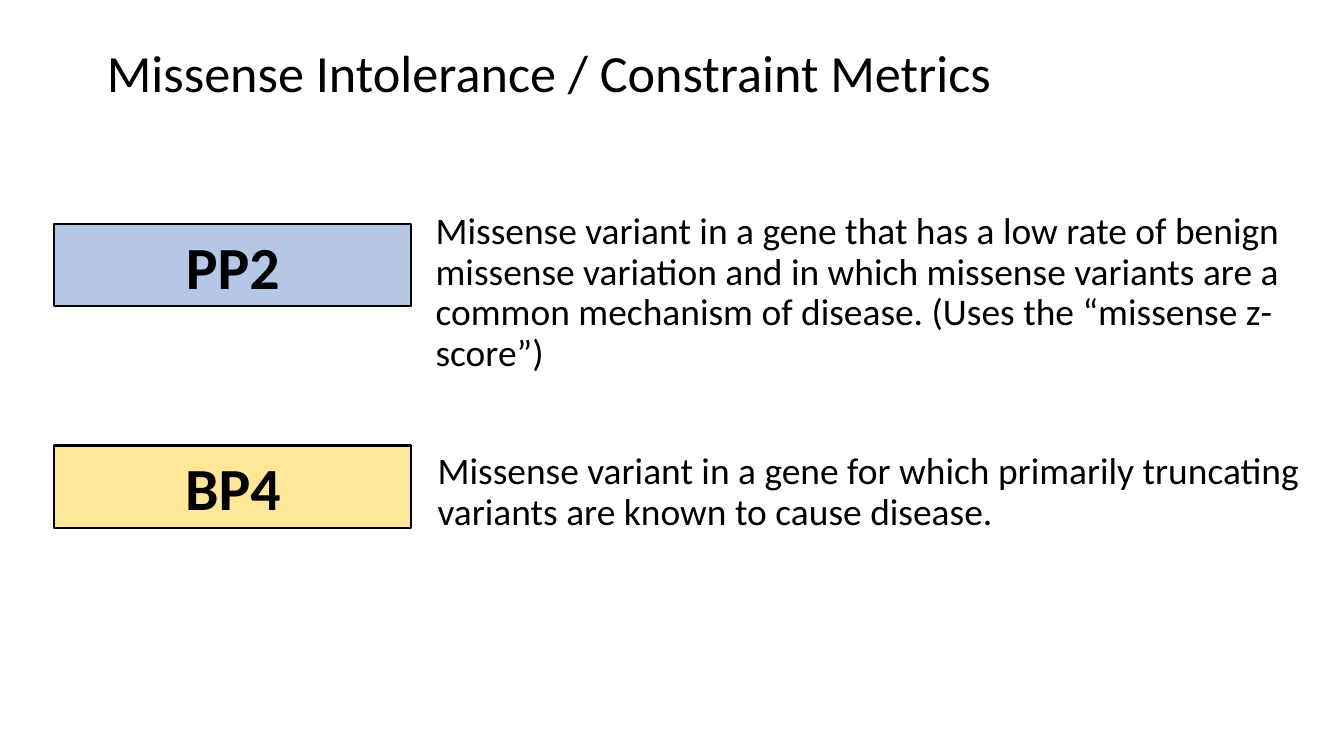
from lxml import etree
from pptx import Presentation
from pptx.dml.color import RGBColor
from pptx.enum.shapes import MSO_SHAPE
from pptx.enum.text import MSO_ANCHOR, MSO_AUTO_SIZE, PP_ALIGN
from pptx.oxml.ns import qn
from pptx.util import Inches, Pt

BLACK = RGBColor(0x00, 0x00, 0x00)
BLUE = RGBColor(0xB4, 0xC7, 0xE7)
YELLOW = RGBColor(0xFF, 0xE6, 0x99)
RECTANGLE = MSO_SHAPE.RECTANGLE
LEFT, CENTER = PP_ALIGN.LEFT, PP_ALIGN.CENTER
TOP, MIDDLE = MSO_ANCHOR.TOP, MSO_ANCHOR.MIDDLE
NO_AUTOFIT = MSO_AUTO_SIZE.NONE


def place(shape, left, top, width, height):
    shape.left, shape.top = Inches(left), Inches(top)
    shape.width, shape.height = Inches(width), Inches(height)


def write(shape, text, size, alignment=LEFT, anchor=TOP, spacing=0.9, bold=False):
    """Fill the shape with one unbulleted paragraph."""
    frame = shape.text_frame
    frame.word_wrap = True
    frame.auto_size = NO_AUTOFIT
    frame.vertical_anchor = anchor
    paragraph = frame.paragraphs[0]
    properties = paragraph._p.get_or_add_pPr()
    properties.set("marL", "0")
    properties.set("indent", "0")
    etree.SubElement(properties, qn("a:buNone"))
    paragraph.alignment = alignment
    paragraph.line_spacing = spacing
    paragraph.space_before = Pt(0)
    run = paragraph.add_run()
    run.text = text
    run.font.name = "Calibri"
    run.font.size = Pt(size)
    run.font.bold = bold
    run.font.color.rgb = BLACK


presentation = Presentation()
presentation.slide_width = Inches(13.33)
presentation.slide_height = Inches(7.5)
slide = presentation.slides.add_slide(presentation.slide_layouts[1])

title = slide.shapes.title
place(title, 0.96, 0, 11.41, 1.5)
write(title, "Missense Intolerance / Constraint Metrics", 37.3, anchor=MIDDLE)

pp2_description = slide.placeholders[1]
place(pp2_description, 4.22, 2.06, 8.89, 4.25)
write(
    pp2_description,
    "Missense variant in a gene that has a low rate of benign missense variation "
    "and in which missense variants are a common mechanism of disease. "
    "(Uses the “missense z-score”)",
    26.7,
)

for criterion, top, color in (("PP2", 2.22, BLUE), ("BP4", 4.42, YELLOW)):
    label = slide.shapes.add_shape(
        RECTANGLE, Inches(0.54), Inches(top), Inches(3.54), Inches(0.82)
    )
    label.shadow.inherit = False
    label.fill.solid()
    label.fill.fore_color.rgb = color
    label.line.color.rgb = BLACK
    label.line.width = Pt(1.5)
    write(label, criterion, 42.7, CENTER, MIDDLE, spacing=1.0, bold=True)

bp4_description = slide.shapes.add_textbox(
    Inches(4.34), Inches(4.22), Inches(8.89), Inches(3.2)
)
bp4_frame = bp4_description.text_frame
bp4_frame.margin_left = bp4_frame.margin_right = 0
bp4_frame.margin_top = Inches(0.27)
bp4_frame.margin_bottom = Inches(0.07)
write(
    bp4_description,
    "Missense variant in a gene for which primarily truncating variants "
    "are known to cause disease.",
    26.7,
)

presentation.save("out.pptx")
